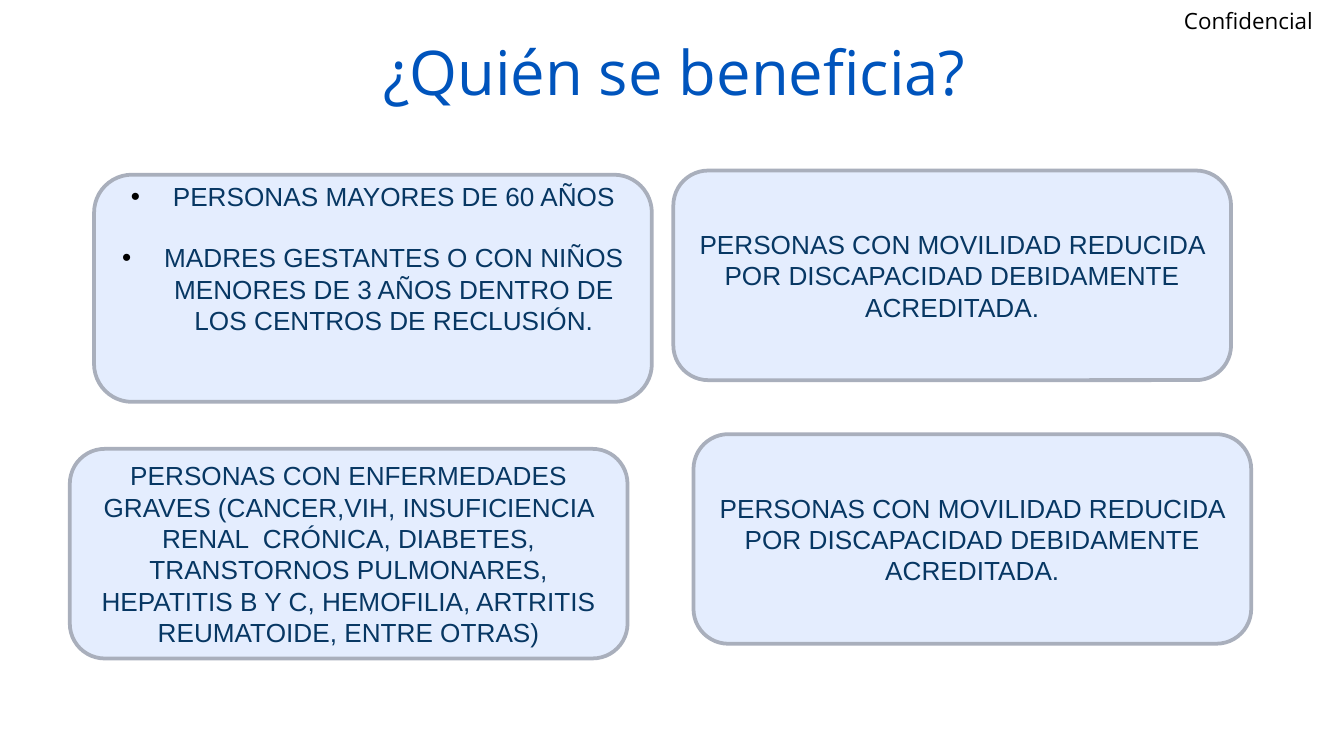
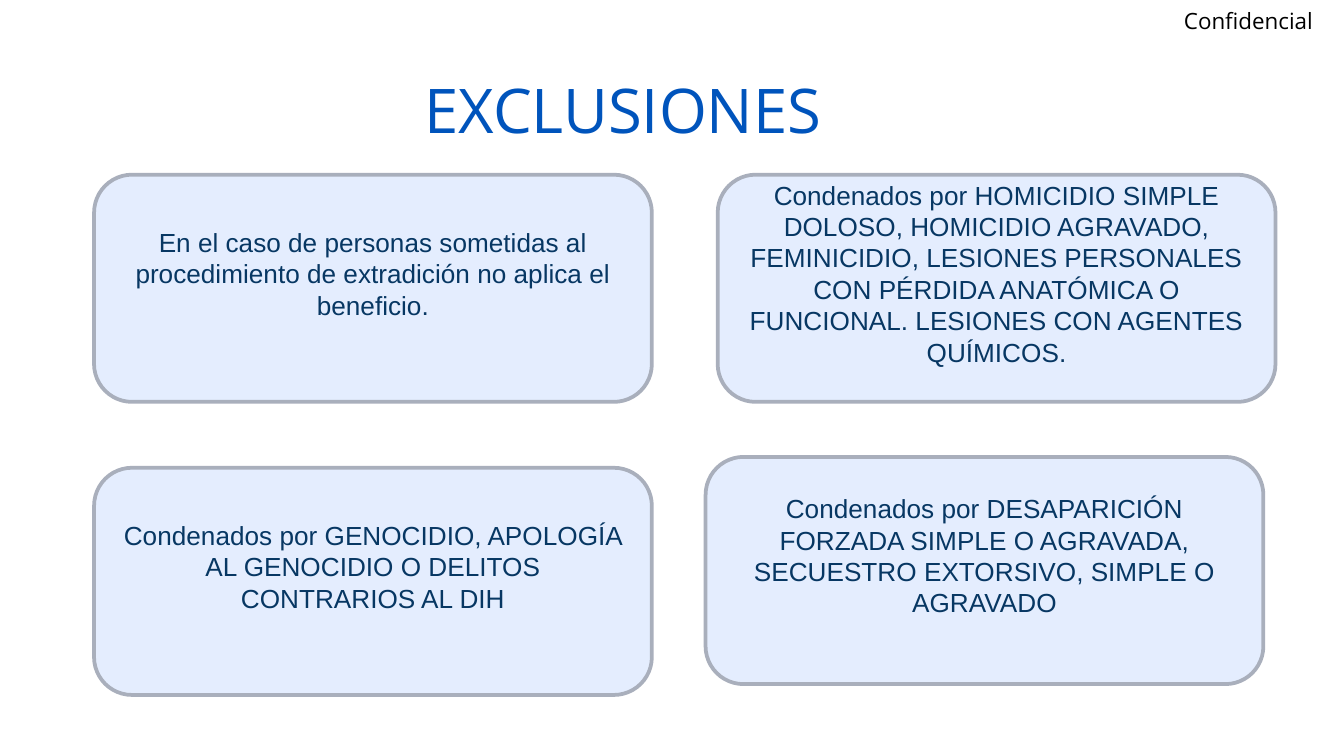
from dataclasses import dataclass

from lxml.etree import SubElement
from pptx import Presentation
from pptx.dml.color import RGBColor
from pptx.enum.shapes import MSO_SHAPE as Shape
from pptx.enum.text import MSO_ANCHOR as Anchor, MSO_AUTO_SIZE as AutoSize, PP_ALIGN as Align
from pptx.oxml.ns import qn
from pptx.slide import Slide
from pptx.text.text import TextFrame, _Paragraph as Paragraph
from pptx.util import Pt

COLORS = {
    "title": "0054BC",
    "label": "000000",
    "bullet": "000000",
    "card": "E4EDFE",
    "border": "A9AFBC",
    "body": "073763",
}
HEADING_FONT = "Open Sans"
BODY_FONT = "Arial"
CARD_WIDTH = 298.8
TALL, SHORT = 121.7, 112.3
BODY_LINE = 16.1
TITLE_LINE = 40.4
BULLET_INDENT = 22.5
TITLE_RIGHT = 671


@dataclass(frozen=True)
class Card:
    left: float
    top: float
    height: float
    text: str
    lines_below: int = 0
    bulleted: bool = False


@dataclass(frozen=True)
class Page:
    title: str
    title_left: float
    title_lines_below: int
    cards: tuple[Card, ...]


REDUCED_MOBILITY = "PERSONAS CON MOVILIDAD REDUCIDA POR DISCAPACIDAD DEBIDAMENTE ACREDITADA."

PAGES = (
    Page("¿Quién se beneficia?", 200.2, 1, (
        Card(50.4, 93.6, TALL,
             "PERSONAS MAYORES DE 60 AÑOS\n"
             "MADRES GESTANTES O CON NIÑOS MENORES DE 3 AÑOS DENTRO DE "
             "LOS CENTROS DE RECLUSIÓN.", 2, True),
        Card(37.4, 240.5, SHORT,
             "PERSONAS CON ENFERMEDADES GRAVES (CANCER,VIH, INSUFICIENCIA "
             "RENAL  CRÓNICA, DIABETES, TRANSTORNOS PULMONARES, HEPATITIS B Y C, "
             "HEMOFILIA, ARTRITIS REUMATOIDE, ENTRE OTRAS)"),
        Card(360.7, 91.4, SHORT, REDUCED_MOBILITY),
        Card(371.5, 232.6, SHORT, REDUCED_MOBILITY),
    )),
    Page("EXCLUSIONES", 222.5, 0, (
        Card(50.4, 93.6, TALL,
             "En el caso de personas sometidas al procedimiento de extradición "
             "no aplica el beneficio.", 1),
        Card(50.4, 250.6, TALL,
             "Condenados por GENOCIDIO, APOLOGÍA AL GENOCIDIO O DELITOS "
             "CONTRARIOS AL DIH", 1),
        Card(384.5, 93.6, TALL,
             "Condenados por HOMICIDIO SIMPLE DOLOSO, HOMICIDIO AGRAVADO, "
             "FEMINICIDIO, LESIONES PERSONALES CON PÉRDIDA ANATÓMICA O FUNCIONAL. "
             "LESIONES CON AGENTES QUÍMICOS.", 1),
        Card(378, 244.8, TALL,
             "Condenados por DESAPARICIÓN FORZADA SIMPLE O AGRAVADA, SECUESTRO "
             "EXTORSIVO, SIMPLE O AGRAVADO", 1),
    )),
)


def rgb(role: str) -> RGBColor:
    return RGBColor.from_string(COLORS[role])


def set_frame(frame: TextFrame, side: float, edge: float, below: float = 0) -> None:
    frame.word_wrap = True
    frame.auto_size = AutoSize.NONE
    frame.vertical_anchor = Anchor.MIDDLE
    frame.margin_left = frame.margin_right = Pt(side)
    frame.margin_top = Pt(edge)
    frame.margin_bottom = Pt(edge + below)


def format_runs(paragraph: Paragraph, font: str, size: float, role: str) -> None:
    for run in paragraph.runs:
        run.font.name = font
        run.font.size = Pt(size)
        run.font.color.rgb = rgb(role)


def set_heading(frame: TextFrame, text: str, size: float, role: str, below: float = 0) -> None:
    set_frame(frame, 5, 2.9, below)
    frame.text = text
    paragraph = frame.paragraphs[0]
    paragraph.alignment = Align.LEFT
    paragraph.line_spacing = 0.9
    format_runs(paragraph, HEADING_FONT, size, role)


def add_bullet(paragraph: Paragraph) -> None:
    properties = paragraph._p.get_or_add_pPr()
    properties.set("marL", str(Pt(BULLET_INDENT)))
    properties.set("indent", str(-Pt(BULLET_INDENT)))
    color = SubElement(properties, qn("a:buClr"))
    SubElement(color, qn("a:srgbClr")).set("val", COLORS["bullet"])
    SubElement(properties, qn("a:buFont")).set("typeface", BODY_FONT)
    SubElement(properties, qn("a:buChar")).set("char", "•")


def draw_card(slide: Slide, card: Card) -> None:
    panel = slide.shapes.add_shape(
        Shape.ROUNDED_RECTANGLE, Pt(card.left), Pt(card.top), Pt(CARD_WIDTH), Pt(card.height))
    panel.shadow.inherit = False
    panel.fill.solid()
    panel.fill.fore_color.rgb = rgb("card")
    panel.line.color.rgb = rgb("border")
    panel.line.width = Pt(2)
    frame = panel.text_frame
    set_frame(frame, 7.2, 3.6, card.lines_below * BODY_LINE)
    frame.text = card.text
    for index, paragraph in enumerate(frame.paragraphs):
        if card.bulleted:
            add_bullet(paragraph)
        if index:
            paragraph.space_before = Pt(BODY_LINE)
        paragraph.alignment = Align.CENTER
        format_runs(paragraph, BODY_FONT, 14, "body")


def draw_page(slide: Slide, page: Page) -> None:
    confidential = slide.shapes.add_textbox(Pt(629.3), Pt(0.7), Pt(90.7), Pt(22.3))
    set_heading(confidential.text_frame, "Confidencial", 12, "label")
    title = slide.shapes.title
    title.left, title.top = Pt(page.title_left), Pt(21.6)
    title.width, title.height = Pt(TITLE_RIGHT - page.title_left), Pt(78.5)
    set_heading(title.text_frame, page.title, 33, "title", page.title_lines_below * TITLE_LINE)
    for card in page.cards:
        draw_card(slide, card)


def main() -> None:
    deck = Presentation()
    deck.slide_width, deck.slide_height = Pt(720), Pt(405)
    title_only = deck.slide_layouts.get_by_name("Title Only")
    for page in PAGES:
        draw_page(deck.slides.add_slide(title_only), page)
    deck.save("out.pptx")


if __name__ == "__main__":
    main()
